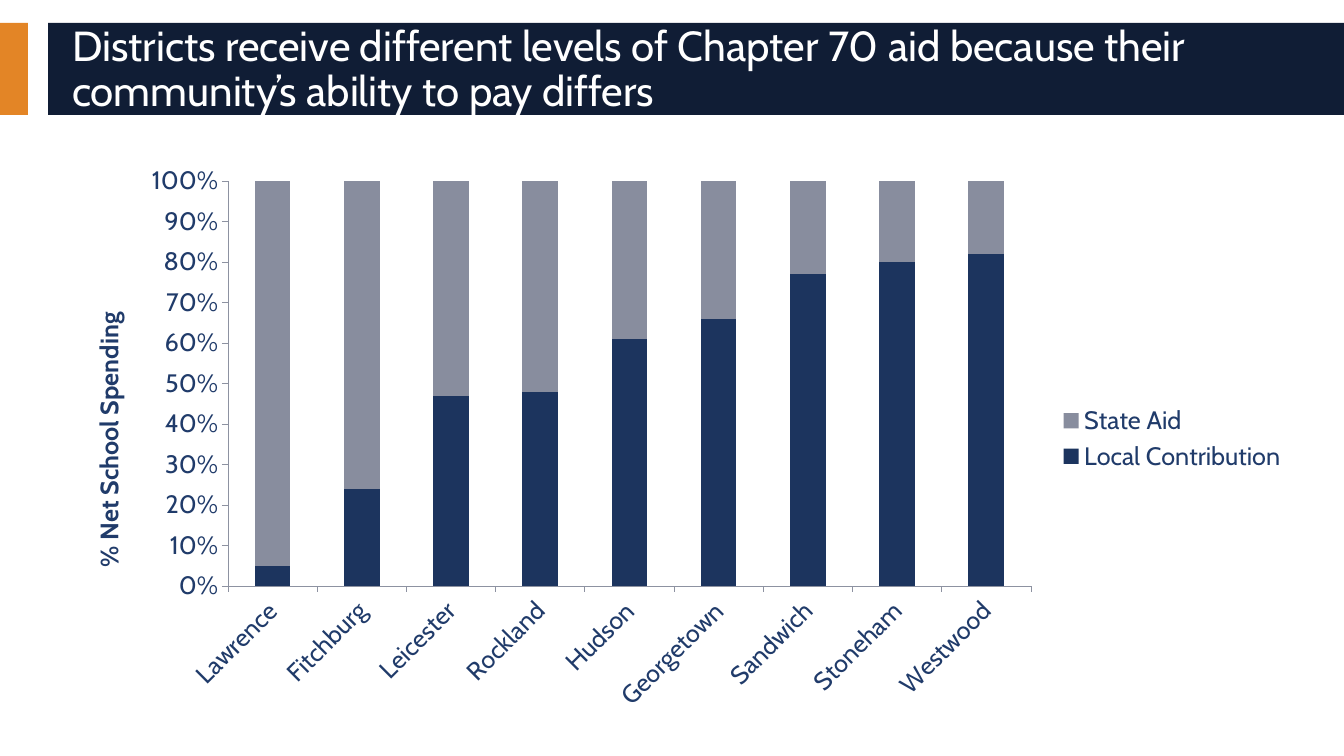
"""Build a slide charting local contribution and state aid by school district."""
from lxml import etree
from pptx import Presentation
from pptx.chart.data import CategoryChartData
from pptx.dml.color import RGBColor
from pptx.enum.chart import XL_CHART_TYPE, XL_LEGEND_POSITION, XL_TICK_MARK
from pptx.enum.shapes import MSO_SHAPE
from pptx.enum.text import MSO_ANCHOR, MSO_AUTO_SIZE, PP_ALIGN
from pptx.oxml import parse_xml
from pptx.oxml.ns import nsdecls, qn
from pptx.util import Pt

PX = 914400 / 100.8
FONT = "Cabin"
WHITE = RGBColor(0xFF, 0xFF, 0xFF)
ORANGE = RGBColor(0xE3, 0x85, 0x26)
NAVY = RGBColor(0x10, 0x1D, 0x35)
TEXT = RGBColor(0x20, 0x3B, 0x6A)
AXIS = RGBColor(0x8D, 0x92, 0xA1)
LOCAL = RGBColor(0x1C, 0x34, 0x5E)
STATE = RGBColor(0x88, 0x8D, 0x9E)


def box(*lengths):
    """Turn px lengths into EMU."""
    return [round(n * PX) for n in lengths]


def manual_layout(**values):
    """Return a chart layout element placed by fractions of the chart."""
    layout = parse_xml(f"<c:layout {nsdecls('c')}><c:manualLayout/></c:layout>")
    for tag, val in values.items():
        etree.SubElement(layout[0], qn(f"c:{tag}")).set("val", str(val))
    return layout


prs = Presentation()
prs.slide_width, prs.slide_height = box(1344, 756)
s = prs.slides.add_slide(prs.slide_layouts[5])

title = s.shapes.title
title.left, title.top, title.width, title.height = box(62, 33, 1254, 75)
tf = title.text_frame
tf.text = "Districts receive different levels of Chapter 70 aid because their community’s ability to pay differs"
tf.word_wrap = True
tf.auto_size = MSO_AUTO_SIZE.NONE
tf.vertical_anchor = MSO_ANCHOR.MIDDLE
p = tf.paragraphs[0]
p.alignment = PP_ALIGN.LEFT
p.line_spacing = 0.9
r = p.runs[0]
r.font.size = Pt(30)
r.font.name = FONT
r.font.color.rgb = WHITE

for left, width, color in [(0, 28, ORANGE), (48, 1296, NAVY)]:
    sp = s.shapes.add_shape(MSO_SHAPE.RECTANGLE, *box(left, 23, width, 92))
    sp.shadow.inherit = False
    sp.fill.solid()
    sp.fill.fore_color.rgb = color
    sp.line.fill.background()
    title.element.addprevious(sp.element)

local_shares = [5, 24, 47, 48, 61, 66, 77, 80, 82]
data = CategoryChartData(number_format="0")
data.categories = ["Lawrence", "Fitchburg", "Leicester", "Rockland", "Hudson",
                   "Georgetown", "Sandwich", "Stoneham", "Westwood"]
data.add_series("Local Contribution", local_shares)
data.add_series("State Aid", [100 - share for share in local_shares])
chart = s.shapes.add_chart(
    XL_CHART_TYPE.COLUMN_STACKED_100, *box(62, 154, 1235, 569), data).chart
chart.has_title = False
chart.font.size = Pt(18)
chart.font.name = FONT
chart.font.color.rgb = TEXT

plot = chart.plots[0]
plot.gap_width = 150
plot.overlap = 100
plot.vary_by_categories = False
for series, color in zip(plot.series, [LOCAL, STATE]):
    series.format.fill.solid()
    series.format.fill.fore_color.rgb = color

for axis in (chart.category_axis, chart.value_axis):
    axis.has_major_gridlines = False
    axis.major_tick_mark = XL_TICK_MARK.OUTSIDE
    axis.minor_tick_mark = XL_TICK_MARK.NONE
    axis.format.line.color.rgb = AXIS
    axis.format.line.width = Pt(0.5)
    axis.tick_labels.font.size = Pt(18)
    axis.tick_labels.font.name = FONT
    axis.tick_labels.font.color.rgb = TEXT
chart.category_axis.tick_labels.font._element.getparent().getparent().getparent().find(
    qn("a:bodyPr")).set("rot", "-2700000")

value_axis = chart.value_axis
value_axis.minimum_scale, value_axis.maximum_scale = 0, 1
value_axis.major_unit = 0.1
value_axis.tick_labels.number_format = "0%"
value_axis.tick_labels.number_format_is_linked = False
axis_title = value_axis.axis_title
axis_title.text_frame.text = "% Net School Spending"
r = axis_title.text_frame.paragraphs[0].runs[0]
r.font.size = Pt(18)
r.font.bold = True
r.font.name = FONT
r.font.color.rgb = TEXT
body = axis_title.text_frame._txBody.find(qn("a:bodyPr"))
body.set("rot", "-5400000")
body.set("vert", "horz")

chart.has_legend = True
legend = chart.legend
legend.position = XL_LEGEND_POSITION.RIGHT
legend.include_in_layout = False
legend.font.size = Pt(18)
legend.font.name = FONT
legend.font.color.rgb = TEXT

title_el = axis_title._element
for old in title_el.findall(qn("c:layout")):
    title_el.remove(old)
title_el.find(qn("c:tx")).addnext(
    manual_layout(xMode="edge", yMode="edge", x=0.02, y=0.27))
plot_area = chart._chartSpace.chart.plotArea
for old in plot_area.findall(qn("c:layout")):
    plot_area.remove(old)
plot_area.insert(0, manual_layout(
    layoutTarget="inner", xMode="edge", yMode="edge",
    x=round(166 / 1235, 4), y=round(27 / 569, 4),
    w=round(803 / 1235, 4), h=round(405 / 569, 4)))

prs.save("out.pptx")
